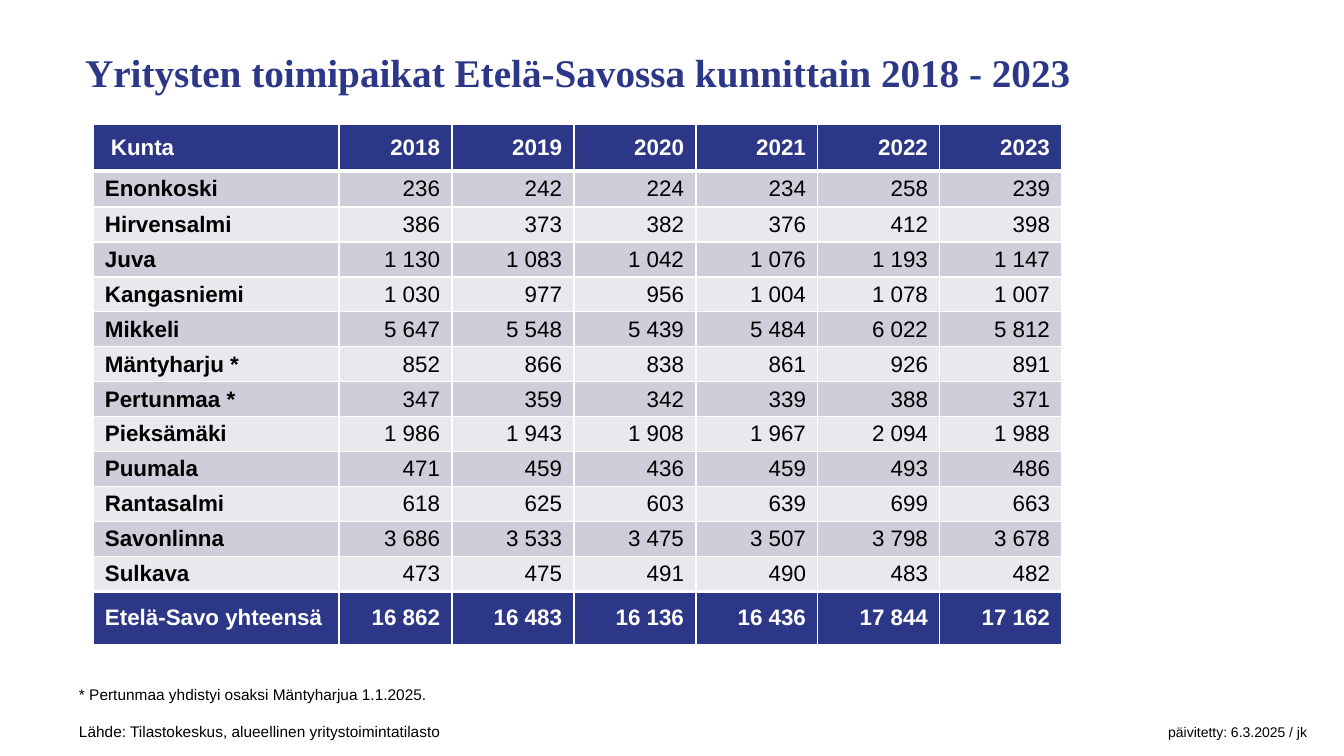
from lxml import etree
from pptx import Presentation, util as u
from pptx.dml.color import RGBColor
from pptx.enum import text as t
from pptx.oxml import ns

NAVY = RGBColor(0x2D, 0x37, 0x87)
WHITE = RGBColor(0xFF, 0xFF, 0xFF)
BLACK = RGBColor(0, 0, 0)
BAND_DARK = RGBColor(0xCD, 0xCE, 0xD9)
BAND_LIGHT = RGBColor(0xE8, 0xE8, 0xED)

SLIDE_WIDTH, SLIDE_HEIGHT = 1344, 756
EMU_PER_PX = 12192000 / SLIDE_WIDTH

YEARS = range(2018, 2024)
COUNTS = {
    "Enonkoski": (236, 242, 224, 234, 258, 239),
    "Hirvensalmi": (386, 373, 382, 376, 412, 398),
    "Juva": (1130, 1083, 1042, 1076, 1193, 1147),
    "Kangasniemi": (1030, 977, 956, 1004, 1078, 1007),
    "Mikkeli": (5647, 5548, 5439, 5484, 6022, 5812),
    "Mäntyharju *": (852, 866, 838, 861, 926, 891),
    "Pertunmaa *": (347, 359, 342, 339, 388, 371),
    "Pieksämäki": (1986, 1943, 1908, 1967, 2094, 1988),
    "Puumala": (471, 459, 436, 459, 493, 486),
    "Rantasalmi": (618, 625, 603, 639, 699, 663),
    "Savonlinna": (3686, 3533, 3475, 3507, 3798, 3678),
    "Sulkava": (473, 475, 491, 490, 483, 482),
    "Etelä-Savo yhteensä": (16862, 16483, 16136, 16436, 17844, 17162),
}
COLUMN_WIDTHS = [246, 113] + [122] * 5
ROW_HEIGHTS = [47, 36] + [35] * 11 + [53]


def px(length):
    return u.Emu(round(length * EMU_PER_PX))


def add_run(paragraph, content, size=16, font="Arial", color=BLACK, bold=False):
    run = paragraph.add_run()
    run.text = content
    run.font.size = u.Pt(size)
    run.font.name = font
    run.font.bold = bold
    run.font.color.rgb = color


def add_text_box(slide, left, top, width, height, margins):
    frame = slide.shapes.add_textbox(px(left), px(top), px(width), px(height)).text_frame
    frame.word_wrap = True
    (frame.margin_left, frame.margin_top,
     frame.margin_right, frame.margin_bottom) = map(px, margins)
    return frame


def add_right_tab(paragraph, position):
    tabs = etree.SubElement(paragraph._p.get_or_add_pPr(), ns.qn("a:tabLst"))
    etree.SubElement(tabs, ns.qn("a:tab"), pos=str(px(position)), algn="r")


def set_borders(cell, top, bottom):
    properties = cell._tc.get_or_add_tcPr()
    for side, points in (("L", 1), ("R", 1), ("T", top), ("B", bottom)):
        line = etree.SubElement(properties, ns.qn(f"a:ln{side}"), w=str(u.Pt(points)))
        fill = etree.SubElement(line, ns.qn("a:solidFill"))
        etree.SubElement(fill, ns.qn("a:srgbClr"), val=str(WHITE))


def format_cell(cell, content, fill, color, bold, is_name, indent, borders):
    set_borders(cell, *borders)
    cell.fill.solid()
    cell.fill.fore_color.rgb = fill
    cell.vertical_anchor = t.MSO_ANCHOR.MIDDLE
    cell.margin_top = cell.margin_bottom = 0
    cell.margin_left = px(indent if is_name else 0)
    cell.margin_right = px(0 if is_name else 12)
    paragraph = cell.text_frame.paragraphs[0]
    paragraph.alignment = t.PP_ALIGN.LEFT if is_name else t.PP_ALIGN.RIGHT
    add_run(paragraph, content, color=color, bold=bold)


def add_count_table(slide, left, top):
    rows = [["Kunta", *map(str, YEARS)]]
    for name, counts in COUNTS.items():
        rows.append([name, *(f"{count:,}".replace(",", " ") for count in counts)])
    last = len(rows) - 1
    table = slide.shapes.add_table(
        len(rows), len(COLUMN_WIDTHS), px(left), px(top),
        px(sum(COLUMN_WIDTHS)), px(sum(ROW_HEIGHTS))).table
    for column, width in zip(table.columns, COLUMN_WIDTHS):
        column.width = px(width)
    for i, (row, height) in enumerate(zip(rows, ROW_HEIGHTS)):
        table.rows[i].height = px(height)
        strong = i in (0, last)
        fill = NAVY if strong else BAND_DARK if i % 2 else BAND_LIGHT
        # Thick rules separate the header and the total from the body
        borders = (3 if i in (1, last) else 1, 3 if i in (0, last - 1) else 1)
        for j, content in enumerate(row):
            format_cell(table.cell(i, j), content, fill, WHITE if strong else BLACK,
                        strong or j == 0, j == 0, 18 if i == 0 else 12, borders)


def main():
    presentation = Presentation()
    presentation.slide_width = px(SLIDE_WIDTH)
    presentation.slide_height = px(SLIDE_HEIGHT)
    slide = presentation.slides.add_slide(presentation.slide_layouts[6])

    # Title
    title = add_text_box(slide, 85, 44, 1104, 56, (0, 0, 0, 5))
    title.vertical_anchor = t.MSO_ANCHOR.BOTTOM
    add_run(title.paragraphs[0], "Yritysten toimipaikat Etelä-Savossa kunnittain 2018 - 2023",
            size=28, font="Times New Roman", color=NAVY, bold=True)

    # Table of business locations
    add_count_table(slide, 93, 124)

    # Footnote, source and date of update
    notes = add_text_box(slide, 69, 680, 1262, 63, (10, 5, 10, 5))
    add_run(notes.paragraphs[0], "* Pertunmaa yhdistyi osaksi Mäntyharjua 1.1.2025.", size=11)
    source = notes.add_paragraph()
    source.space_before = u.Pt(13)
    add_right_tab(source, 1228)
    add_run(source, "Lähde: Tilastokeskus, alueellinen yritystoimintatilasto\t", size=11)
    add_run(source, "päivitetty: 6.3.2025 / jk", size=10)

    presentation.save("out.pptx")


if __name__ == "__main__":
    main()
